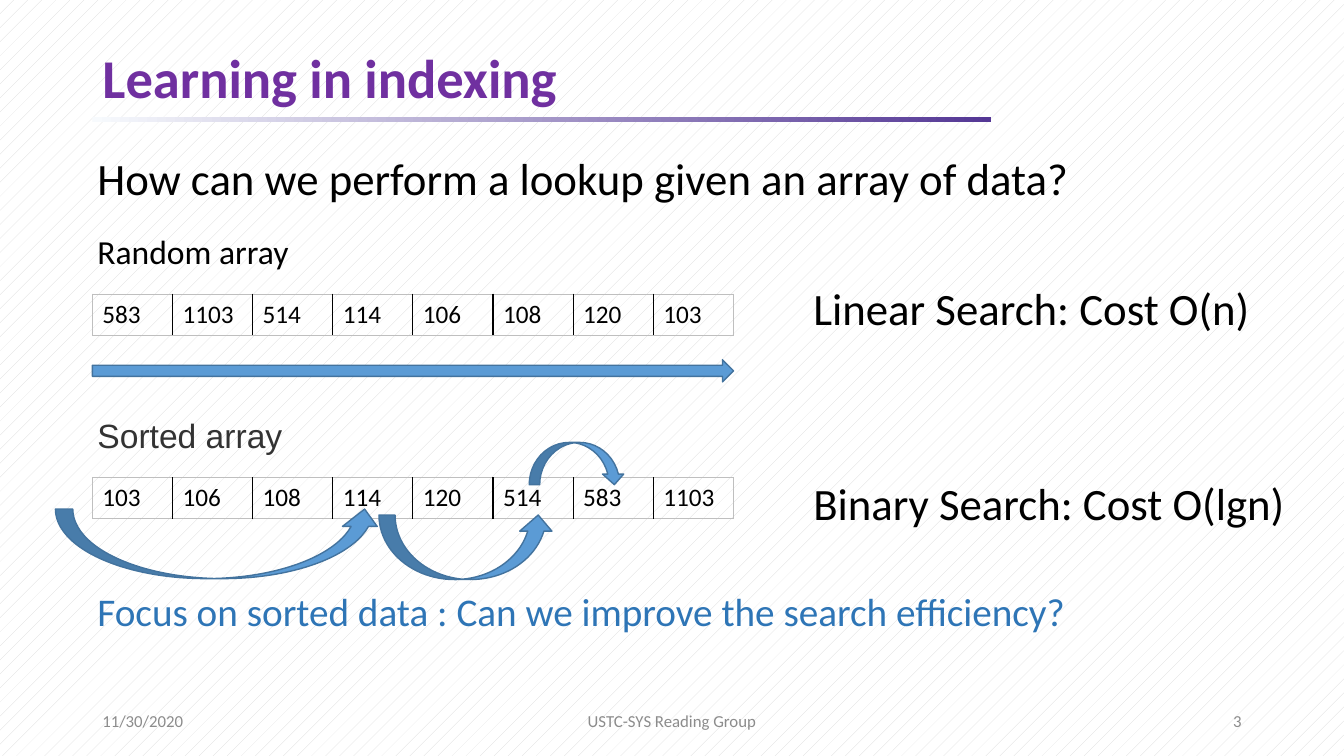
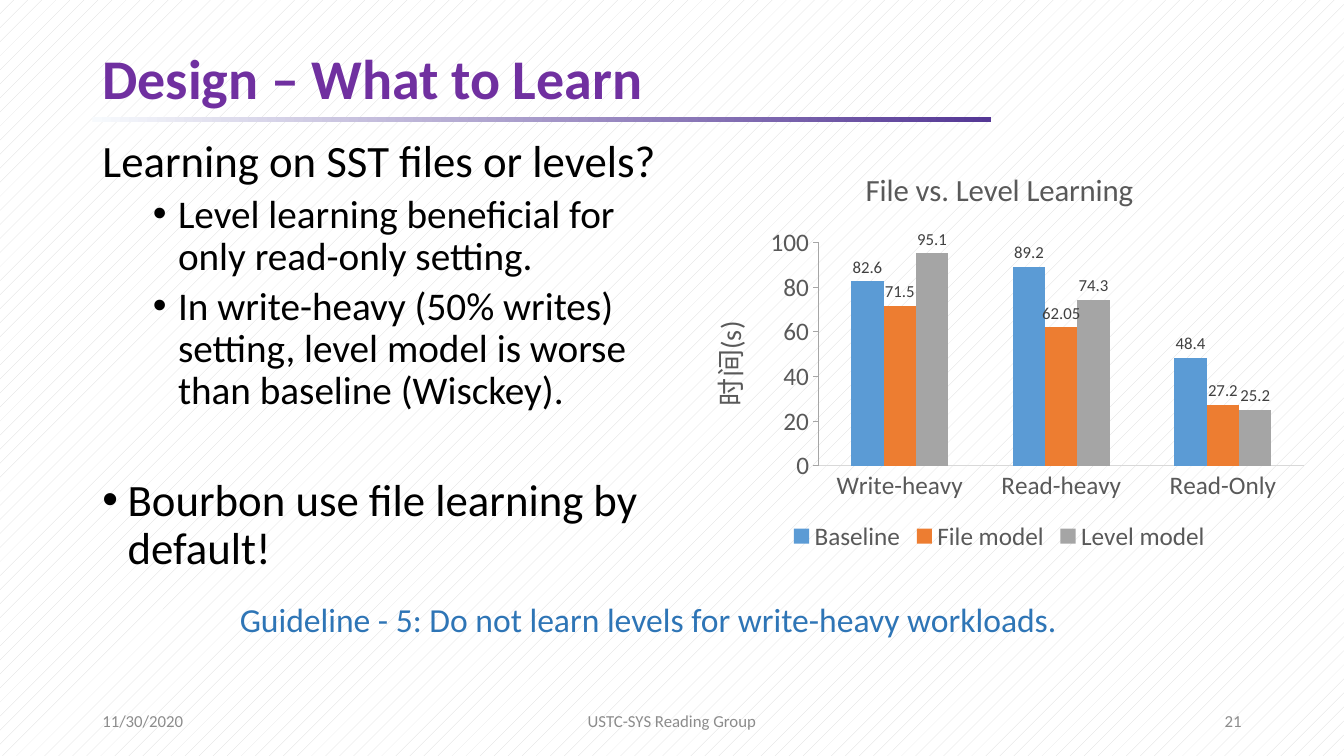
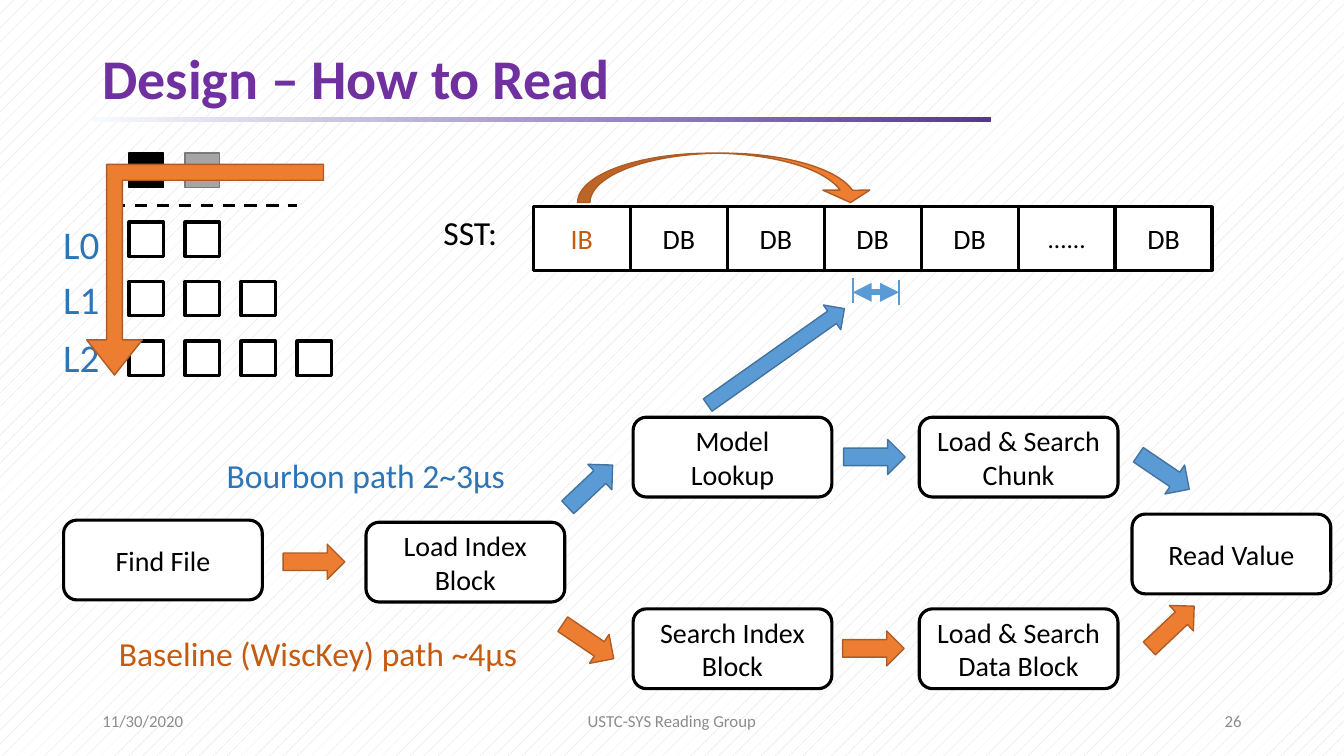
from lxml.etree import SubElement
from pptx import Presentation
from pptx.chart.data import CategoryChartData
from pptx.dml.color import RGBColor
from pptx.enum.chart import XL_CHART_TYPE as CHART, XL_LABEL_POSITION as LABEL
from pptx.enum.chart import XL_LEGEND_POSITION as LEGEND, XL_TICK_MARK as TICK
from pptx.enum.dml import MSO_LINE, MSO_PATTERN
from pptx.enum.shapes import MSO_CONNECTOR, MSO_SHAPE as SHAPE
from pptx.enum.text import MSO_ANCHOR as ANCHOR, MSO_AUTO_SIZE, PP_ALIGN as ALIGN
from pptx.oxml.ns import qn
from pptx.util import Pt

HEX = {
    "black": "000000", "white": "FFFFFF", "title": "7030A0", "footer": "8C8C8C",
    "band start": "F7FAFD", "band end": "543795", "hatch": "D9D9D9",
    "blue": "5B9BD5", "blue edge": "43739E", "blue text": "2E75B6",
    "orange": "ED7D31", "orange edge": "AF5C24", "orange text": "C55A11",
    "gray": "A5A5A5", "gray edge": "7A7A7A", "dark gray": "333333",
    "chart text": "595959", "label": "404040", "category line": "D9D9D9",
    "value line": "A6A6A6", "table edge": "BFBFBF",
}
COLORS = {name: RGBColor.from_string(value) for name, value in HEX.items()}
LEFT = 66


def write(shape, text, size=20, color="black", bold=False, font="Calibri",
          align=ALIGN.LEFT, anchor=ANCHOR.TOP, inset=7.2, spacing=None):
    """Fill a shape or text box with text, one paragraph a line."""
    frame = shape.text_frame
    frame.word_wrap = True
    frame.auto_size = MSO_AUTO_SIZE.NONE
    frame.vertical_anchor = anchor
    frame.margin_left = frame.margin_right = Pt(inset)
    frame.margin_top = frame.margin_bottom = Pt(3.6)
    frame.text = text
    for paragraph in frame.paragraphs:
        paragraph.alignment = align
        paragraph.line_spacing = spacing
        for run in paragraph.runs:
            run.font.name, run.font.size, run.font.bold = font, Pt(size), bold
            run.font.color.rgb = COLORS[color]


def draw(slide, kind, box, fill, edge, width=1, rotation=0, adjustments=()):
    """Add a filled and outlined preset shape; box is in points."""
    shape = slide.shapes.add_shape(kind, *map(Pt, box))
    shape.shadow.inherit = False
    shape.fill.solid()
    shape.fill.fore_color.rgb = COLORS[fill]
    shape.line.color.rgb = COLORS[edge]
    shape.line.width = Pt(width)
    shape.rotation = rotation
    for index, value in enumerate(adjustments):
        shape.adjustments[index] = value
    return shape


presentation = Presentation()
presentation.slide_width, presentation.slide_height = Pt(960), Pt(540)
master = presentation.slide_master

# Shared background, title place, band and footers
background = master.background.fill
background.patterned()
background.pattern = MSO_PATTERN.PERCENT_5
background.fore_color.rgb = COLORS["hatch"]
background.back_color.rgb = COLORS["white"]

master_title = master.placeholders[0]
master_title.left, master_title.top = Pt(LEFT), Pt(31)
master_title.width, master_title.height = Pt(828), Pt(54)

TITLE_AND_BODY, TITLE_ONLY = presentation.slide_layouts[1], presentation.slide_layouts[5]
slides = []
for layout, title, title_size, number in (
    (TITLE_ONLY, "Learning in indexing", 39, "3"),
    (TITLE_AND_BODY, "Design – What to Learn", 40, "21"),
    (TITLE_ONLY, "Design – How to Read", 40, "26"),
):
    slide = presentation.slides.add_slide(layout)
    slides.append(slide)
    write(slide.shapes.title, title, size=title_size, color="title", bold=True,
          anchor=ANCHOR.MIDDLE, spacing=0.9)
    for text, left, width, align in (
        ("11/30/2020", LEFT, 216, ALIGN.LEFT),
        ("USTC-SYS Reading Group", 318, 324, ALIGN.CENTER),
        (number, 678, 216, ALIGN.RIGHT),
    ):
        footer = slide.shapes.add_textbox(Pt(left), Pt(500.5), Pt(width), Pt(28.8))
        write(footer, text, size=12, color="footer", align=align, anchor=ANCHOR.MIDDLE)
indexing, learning, reading = slides

band = indexing.shapes.add_shape(SHAPE.RECTANGLE, Pt(LEFT), Pt(83.5), Pt(642), Pt(4))
band.shadow.inherit = False
band.line.fill.background()
band.fill.gradient()
band.fill.gradient_angle = 0
for stop, name in zip(band.fill.gradient_stops, ("band start", "band end")):
    stop.color.rgb = COLORS[name]
master.shapes.element.insert(2, band.element)

# Slide: Learning in indexing
for text, box, style in (
    ("How can we perform a lookup given an array of data?", (LEFT, 104.4, 715, 46), {"size": 32}),
    ("Random array", (LEFT, 161.3, 354, 36), {"size": 24}),
    ("Linear Search: Cost O(n)", (577.4, 196.6, 331, 46), {"size": 32}),
    ("Sorted array", (LEFT, 293, 414, 36),
     {"size": 24, "font": "Arial", "color": "dark gray"}),
    ("Binary Search: Cost O(lgn)", (577.4, 336.2, 357, 46), {"size": 32}),
    ("Focus on sorted data : Can we improve the search efficiency?",
     (LEFT, 416.2, 771, 41), {"size": 28, "color": "blue text"}),
):
    write(indexing.shapes.add_textbox(*map(Pt, box)), text, inset=3.6, **style)

random_values = (583, 1103, 514, 114, 106, 108, 120, 103)
last = len(random_values) - 1
for top, values in ((210, random_values), (341, sorted(random_values))):
    table = indexing.shapes.add_table(
        1, len(values), Pt(LEFT), Pt(top), Pt(458), Pt(28.8)).table
    table.first_row = table.horz_banding = False
    for column, value in enumerate(values):
        cell = table.cell(0, column)
        write_target = cell.text_frame
        write_target.text = str(value)
        font = write_target.paragraphs[0].runs[0].font
        font.name, font.size, font.color.rgb = "Calibri", Pt(18), COLORS["black"]
        cell.fill.background()
        properties = cell._tc.get_or_add_tcPr()
        inner = {"a:lnL": column > 0, "a:lnR": column < last, "a:lnT": False, "a:lnB": False}
        for position, (side, is_inner) in enumerate(inner.items()):
            border = SubElement(properties, qn(side), w=str(Pt(1 if is_inner else 0.5)))
            fill = SubElement(border, qn("a:solidFill"))
            SubElement(fill, qn("a:srgbClr"), val=HEX["black" if is_inner else "table edge"])
            properties.insert(position, border)

for kind, box in (
    (SHAPE.RIGHT_ARROW, (LEFT, 257, 458, 15.8)),
    (SHAPE.CURVED_DOWN_ARROW, (378, 316, 68.4, 30.2)),
    (SHAPE.CURVED_UP_ARROW, (39.6, 363.6, 233.3, 49.7)),
    (SHAPE.CURVED_UP_ARROW, (270.7, 367.9, 125.3, 46.1)),
):
    draw(indexing, kind, box, "blue", "blue edge")

# Slide: What to Learn
body = learning.placeholders[1]
body.left, body.top, body.width, body.height = map(Pt, (LEFT, 95.8, 421, 325.4))
outline = (  # text, size, level, left indent, space before
    ("Learning on SST files or levels?", 32, 0, 0, 0),
    ("Level learning beneficial for only read-only setting.", 28, 1, 54, 5),
    ("In write-heavy (50% writes) setting, level model is worse than baseline (Wisckey).",
     28, 1, 54, 5),
    ("Bourbon use file learning by default!", 32, 0, 18, 46),
)
write(body, "\n".join(item[0] for item in outline), spacing=0.9)
for paragraph, (_, size, level, indent, space) in zip(body.text_frame.paragraphs, outline):
    paragraph.level = level
    paragraph.space_before = Pt(space)
    paragraph.runs[0].font.size = Pt(size)
    properties = paragraph._p.get_or_add_pPr()
    properties.set("marL", str(Pt(indent)))
    properties.set("indent", str(Pt(-18 if indent else 0)))
    if indent:
        SubElement(properties, qn("a:buFont"), typeface="Arial")
        SubElement(properties, qn("a:buChar"), char="•")
    else:
        SubElement(properties, qn("a:buNone"))

chart_data = CategoryChartData()
chart_data.categories = ("Write-heavy", "Read-heavy", "Read-Only")
chart_data.add_series("Baseline", (82.6, 89.2, 48.4))
chart_data.add_series("File model", (71.5, 62.05, 27.2))
chart_data.add_series("Level model", (95.1, 74.3, 25.2))
chart = learning.shapes.add_chart(
    CHART.COLUMN_CLUSTERED, *map(Pt, (487.4, 106.6, 452.9, 290.9)), chart_data).chart
chart.font.name, chart.font.size = "Calibri", Pt(18)
chart.font.color.rgb = COLORS["chart text"]
chart.has_legend = True
chart.legend.position = LEGEND.BOTTOM
chart.legend.include_in_layout = False

category_axis, value_axis = chart.category_axis, chart.value_axis
for titled, text, size in ((chart, "File vs. Level Learning", 22), (value_axis, "时间(s)", 20)):
    titled.has_title = True
    paragraph = titled.chart_title.text_frame.paragraphs[0] if titled is chart \
        else titled.axis_title.text_frame.paragraphs[0]
    run = paragraph.add_run()
    run.text = text
    run.font.name, run.font.size, run.font.bold = "Calibri", Pt(size), False
    run.font.color.rgb = COLORS["chart text"]
    SubElement(run._r.get_or_add_rPr(), qn("a:ea"), typeface="Noto Sans CJK SC")
chart.chart_title.include_in_layout = False

for axis, tick, line in ((category_axis, TICK.NONE, "category line"),
                         (value_axis, TICK.OUTSIDE, "value line")):
    axis.major_tick_mark, axis.minor_tick_mark = tick, TICK.NONE
    axis.has_major_gridlines = False
    axis.format.line.color.rgb = COLORS[line]
    axis.format.line.width = Pt(0.75)
value_axis.minimum_scale, value_axis.maximum_scale, value_axis.major_unit = 0, 100, 20

plot = chart.plots[0]
plot.gap_width, plot.overlap, plot.vary_by_categories = 200, 0, False
for series, color in zip(plot.series, ("blue", "orange", "gray")):
    series.format.fill.solid()
    series.format.fill.fore_color.rgb = COLORS[color]
    labels = series.data_labels
    labels.show_value, labels.position = True, LABEL.OUTSIDE_END
    labels.font.name, labels.font.size = "Calibri", Pt(12)
    labels.font.color.rgb = COLORS["label"]

guideline = learning.shapes.add_textbox(*map(Pt, (164.2, 424, 631.5, 36)))
write(guideline, "Guideline - 5: Do not learn levels for write-heavy workloads.",
      size=24, color="blue text")

# Slide: How to Read
FILE_LEFT, FILE_PITCH, FILE_SIZE = 92.2, 40, 24.5
for level, (name, label_top, count) in enumerate((("L0", 154, 2), ("L1", 193, 3), ("L2", 234.7, 4))):
    for column in range(count):
        box = (FILE_LEFT + column * FILE_PITCH, 158.6 + level * 42.5, FILE_SIZE, FILE_SIZE)
        draw(reading, SHAPE.RECTANGLE, box, "white", "black", width=2.25)
    label = reading.shapes.add_textbox(*map(Pt, (38, label_top, 46, 41)))
    write(label, name, size=28, color="blue text")
for column, (fill, edge) in enumerate((("black", "black"), ("gray", "gray edge"))):
    box = (FILE_LEFT + column * FILE_PITCH, 109.4, FILE_SIZE, FILE_SIZE)
    draw(reading, SHAPE.RECTANGLE, box, fill, edge)

for start, end, color, width, dash, ends in (
    ((80.6, 146.9), (212.4, 146.9), "black", 2.25, MSO_LINE.DASH, ()),
    ((609.1, 208.8), (642.2, 208.8), "blue", 4.5, None, ("a:headEnd", "a:tailEnd")),
    ((609.1, 198.7), (609.1, 216.7), "blue", 1.5, None, ()),
    ((642.2, 200.2), (642.2, 218.2), "blue", 1.5, None, ()),
):
    connector = reading.shapes.add_connector(MSO_CONNECTOR.STRAIGHT, *map(Pt, start + end))
    connector.line.color.rgb = COLORS[color]
    connector.line.width = Pt(width)
    connector.line.dash_style = dash
    properties = connector.element.spPr
    for tag in ends:
        SubElement(properties.find(qn("a:ln")), qn(tag), type="triangle")
    SubElement(properties, qn("a:effectLst"))

CELL_WIDTH = 69.25
for column, text in enumerate(("IB", "DB", "DB", "DB", "DB", "......", "DB")):
    box = (381 + column * CELL_WIDTH, 147.6, CELL_WIDTH, 45.4)
    cell = draw(reading, SHAPE.RECTANGLE, box, "white", "black", width=2.25)
    write(cell, text, size=18 if text == "......" else 20,
          color="orange text" if text == "IB" else "black",
          align=ALIGN.CENTER, anchor=ANCHOR.MIDDLE)

for text, left, top in (
    ("Find File", 45.4, 371.5),
    ("Load Index\nBlock", 261.4, 373),
    ("Search Index\nBlock", 452.2, 434.9),
    ("Load & Search\nData Block", 656.6, 434.9),
    ("Model\nLookup", 452.2, 298),
    ("Load & Search\nChunk", 656.6, 298),
    ("Read Value", 808.6, 367.2),
):
    step = draw(reading, SHAPE.ROUNDED_RECTANGLE, (left, top, 142, 57), "white", "black", width=2.25)
    write(step, text, align=ALIGN.CENTER, anchor=ANCHOR.MIDDLE)

DOWN, UP = 34.1, -43.3
for color, left, top, rotation in (
    ("orange", 202.3, 388.8, 0), ("orange", 398.2, 445.7, DOWN),
    ("orange", 601.9, 450.7, 0), ("orange", 815, 435.6, UP),
    ("blue", 399.6, 334.8, UP), ("blue", 602.6, 313.9, 0), ("blue", 809.3, 324.7, DOWN),
):
    draw(reading, SHAPE.RIGHT_ARROW, (left, top, 44, 25), color, color + " edge", rotation=rotation)
for kind, box, color, rotation, adjustments in (
    (SHAPE.BENT_UP_ARROW, (61.9, 117.4, 169.2, 150.5), "orange", 180, (0.075, 0.132, 0.167)),
    (SHAPE.CURVED_DOWN_ARROW, (412.6, 109.4, 211.7, 35.3), "orange", 0, (0.25, 0.948, 0.25)),
    (SHAPE.RIGHT_ARROW, (494.6, 244.1, 119.5, 21.6), "blue", -35.2, ()),
):
    draw(reading, kind, box, color, color + " edge", rotation=rotation, adjustments=adjustments)

for text, box, color in (
    ("SST:", (309.6, 147.6, 60, 36), "black"),
    ("Baseline (WiscKey) path ~4μs", (77.8, 448.6, 312, 36), "orange text"),
    ("Bourbon path 2~3μs", (154.8, 321.1, 222, 36), "blue text"),
):
    write(reading.shapes.add_textbox(*map(Pt, box)), text, size=24, color=color)

presentation.save("out.pptx")
